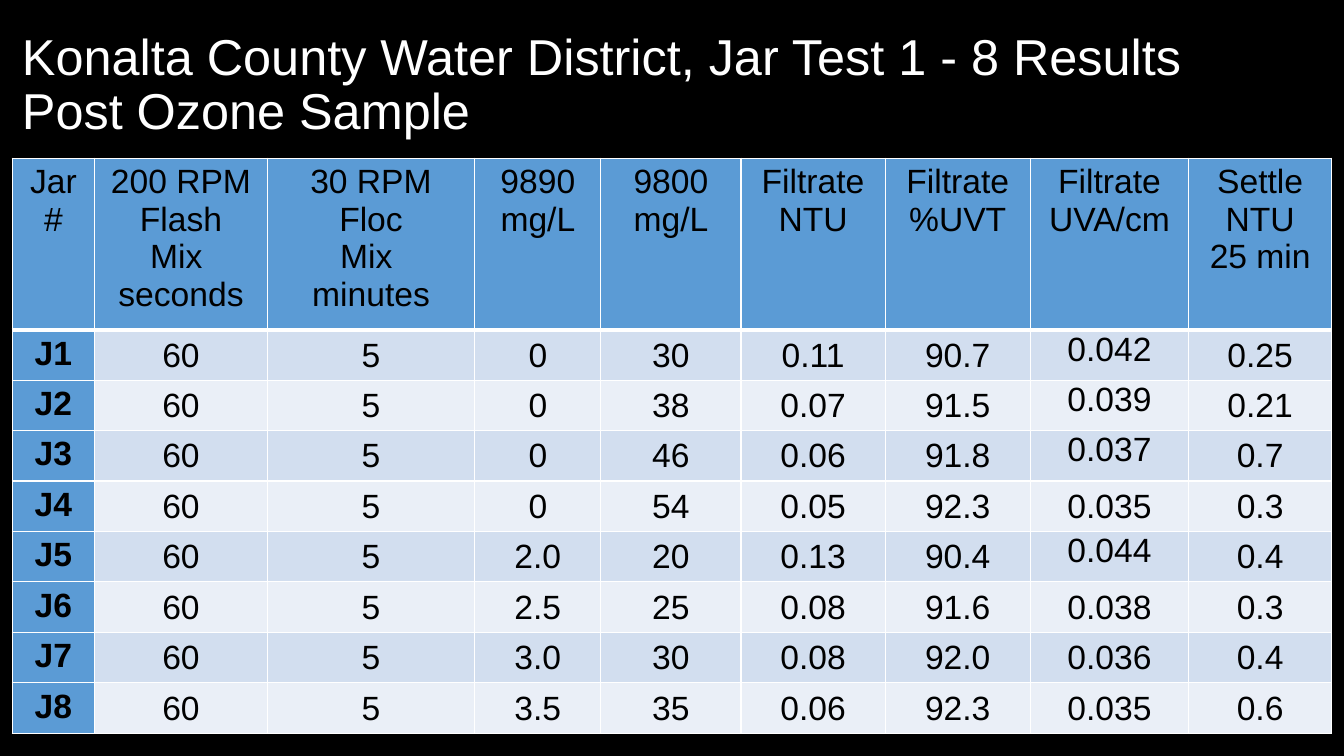
from dataclasses import dataclass

from lxml.etree import SubElement
from pptx import Presentation
from pptx.dml.color import RGBColor
from pptx.enum.text import MSO_ANCHOR, PP_ALIGN
from pptx.oxml.ns import qn
from pptx.util import Emu, Pt

EMU_PER_PX = 9144  # 100 px to the inch


@dataclass(frozen=True)
class Theme:
    font: str = "Arial"
    background: str = "000000"
    title_text: str = "FFFFFF"
    table_text: str = "000000"
    border: str = "FFFFFF"
    heading_fill: str = "5B9BD5"
    band_fills: tuple = ("D2DEEF", "EAEFF7")
    title_size: int = 36
    table_size: int = 24
    thin_border: int = 1
    heading_border: int = 3


TITLE = "Konalta County Water District, Jar Test 1 - 8 Results\vPost Ozone Sample"
HEADINGS = [
    "Jar#", "200 RPM\nFlash\nMix \nseconds", "30 RPM\nFloc\nMix \nminutes",
    "9890\nmg/L", "9800\nmg/L", "Filtrate\nNTU", "Filtrate\n%UVT",
    "Filtrate\nUVA/cm", "Settle\nNTU\n25 min",
]
FLASH_SECONDS, FLOC_MINUTES = "60", "5"
# 9890 dose, 9800 dose, filtrate NTU, %UVT, UVA/cm, settled NTU
JAR_RESULTS = [
    ("0", "30", "0.11", "90.7", "0.042", "0.25"),
    ("0", "38", "0.07", "91.5", "0.039", "0.21"),
    ("0", "46", "0.06", "91.8", "0.037", "0.7"),
    ("0", "54", "0.05", "92.3", "0.035", "0.3"),
    ("2.0", "20", "0.13", "90.4", "0.044", "0.4"),
    ("2.5", "25", "0.08", "91.6", "0.038", "0.3"),
    ("3.0", "30", "0.08", "92.0", "0.036", "0.4"),
    ("3.5", "35", "0.06", "92.3", "0.035", "0.6"),
]
COLUMN_WIDTHS = [82, 171, 206, 125, 139, 143, 144, 157, 142]
HEADING_HEIGHT, JAR_HEIGHT = 158, 47
UVA_COLUMN = 7
TOP_ALIGNED_UVA_JARS = {1, 2, 3, 5}


def px(length):
    return Emu(length * EMU_PER_PX)


def apply(target, values):
    for name, value in values.items():
        setattr(target, name, value)


class SlideBuilder:
    def __init__(self, slide, theme):
        self.slide = slide
        self.theme = theme

    def background(self):
        fill = self.slide.background.fill
        fill.solid()
        fill.fore_color.rgb = RGBColor.from_string(self.theme.background)

    def style_text(self, frame, size, color, bold=False, **paragraph_format):
        for paragraph in frame.paragraphs:
            apply(paragraph, paragraph_format)
            for run in paragraph.runs:
                apply(run.font, {"name": self.theme.font, "size": Pt(size), "bold": bold})
                run.font.color.rgb = RGBColor.from_string(color)

    def title(self, text, left, top, width, height):
        box = self.slide.shapes.add_textbox(px(left), px(top), px(width), px(height))
        frame = box.text_frame
        apply(frame, {"word_wrap": True, "vertical_anchor": MSO_ANCHOR.MIDDLE, "text": text})
        self.style_text(frame, self.theme.title_size, self.theme.title_text, line_spacing=0.9)

    def table(self, left, top, widths, heights):
        frame = self.slide.shapes.add_table(
            len(heights), len(widths), px(left), px(top), px(sum(widths)), px(sum(heights)))
        table = frame.table
        apply(table, {"first_row": False, "horz_banding": False})
        for column, width in zip(table.columns, widths):
            column.width = px(width)
        for row, height in zip(table.rows, heights):
            row.height = px(height)
        return table

    def cell(self, cell, text, fill, bold=False, bottom=None, **cell_format):
        apply(cell, {"text": text, **cell_format})
        self.style_text(cell.text_frame, self.theme.table_size, self.theme.table_text,
                        bold, alignment=PP_ALIGN.CENTER)
        # Borders come before the fill in the cell properties
        thin = self.theme.thin_border
        properties = cell._tc.get_or_add_tcPr()
        for side, weight in {"L": thin, "R": thin, "T": thin, "B": bottom or thin}.items():
            line = SubElement(properties, qn(f"a:ln{side}"), w=str(Pt(weight)))
            SubElement(SubElement(line, qn("a:solidFill")), qn("a:srgbClr"), val=self.theme.border)
        cell.fill.solid()
        cell.fill.fore_color.rgb = RGBColor.from_string(fill)


def main():
    presentation = Presentation()
    apply(presentation, {"slide_width": px(1333), "slide_height": px(750)})
    theme = Theme()
    builder = SlideBuilder(presentation.slides.add_slide(presentation.slide_layouts[6]), theme)

    # Background and title
    builder.background()
    builder.title(TITLE, 12, 13, 1303, 145)

    # Table headings
    heights = [HEADING_HEIGHT] + [JAR_HEIGHT] * len(JAR_RESULTS)
    results = builder.table(12, 157, COLUMN_WIDTHS, heights)
    for column, heading in enumerate(HEADINGS):
        builder.cell(results.cell(0, column), heading, theme.heading_fill,
                     bottom=theme.heading_border)

    # One banded row per jar
    tight_margins = {"margin_left": px(1), "margin_right": px(1),
                     "margin_top": px(1), "margin_bottom": px(0)}
    for jar, measured in enumerate(JAR_RESULTS, start=1):
        builder.cell(results.cell(jar, 0), f"J{jar}", theme.heading_fill, bold=True)
        band = theme.band_fills[(jar - 1) % 2]
        for column, value in enumerate((FLASH_SECONDS, FLOC_MINUTES, *measured), start=1):
            at_top = column == UVA_COLUMN and jar in TOP_ALIGNED_UVA_JARS
            anchor = MSO_ANCHOR.TOP if at_top else MSO_ANCHOR.MIDDLE
            builder.cell(results.cell(jar, column), value, band,
                         vertical_anchor=anchor, **tight_margins)

    presentation.save("out.pptx")


if __name__ == "__main__":
    main()
